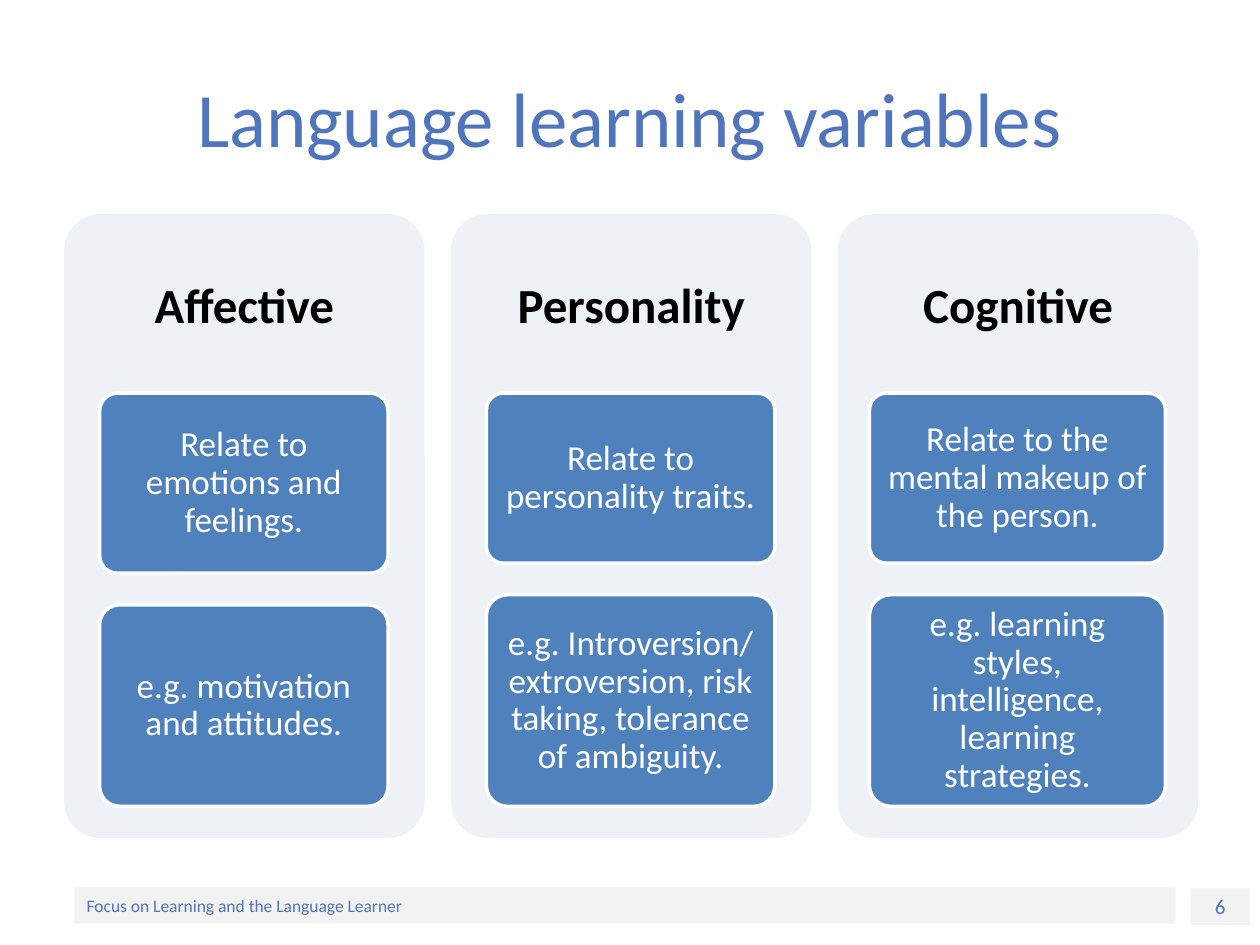
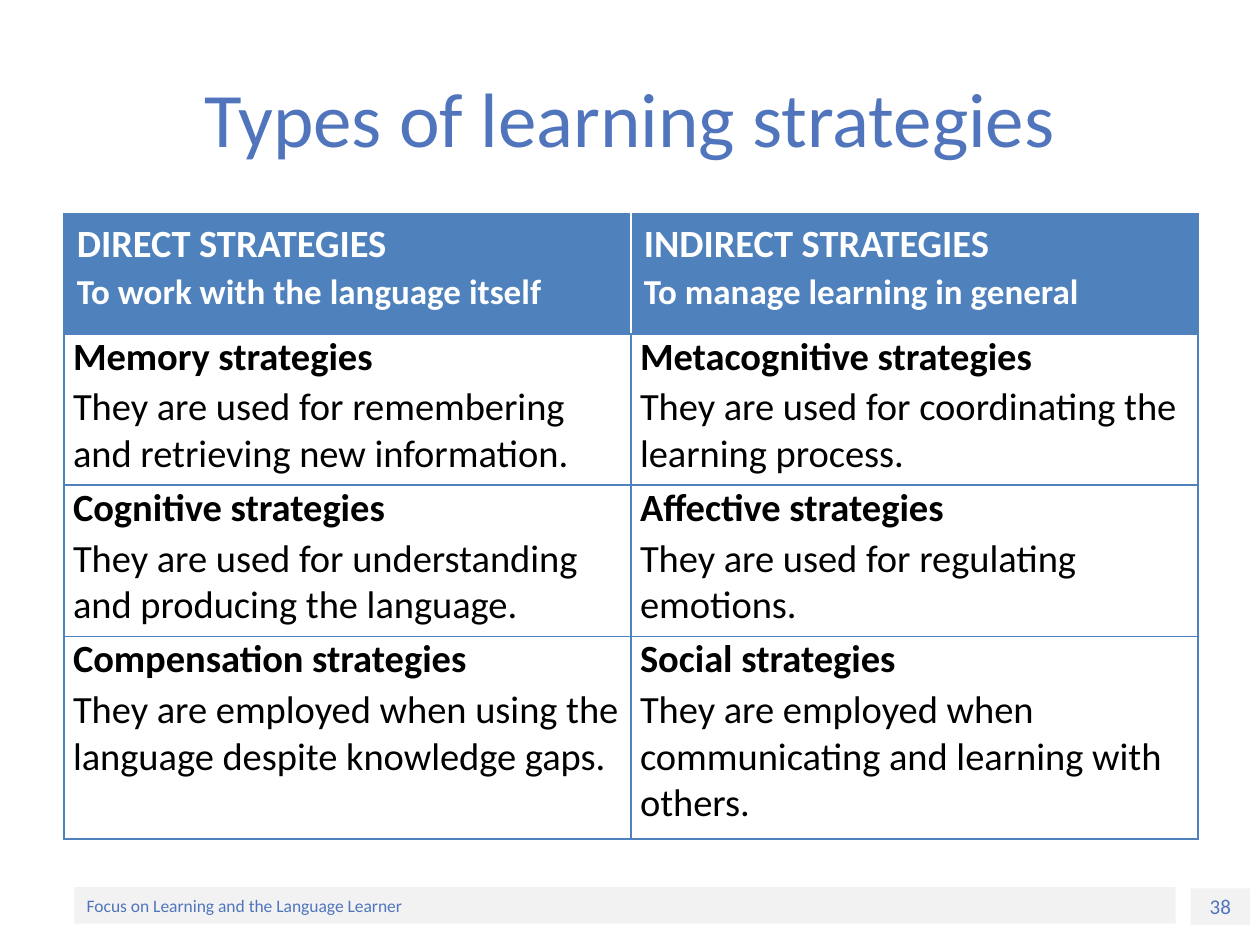
from lxml import etree
from pptx import Presentation, util as u
from pptx.dml.color import RGBColor
from pptx.enum import shapes, text
from pptx.oxml.ns import qn

PX = 9144  # one px is 1/100 inch
FONT = "Calibri"
C = {"title": "5075BC", "band": "F2F2F2", "panel": "EEF1F6",
     "box": "4F81BD", "white": "FFFFFF", "black": "000000"}
FOOTER = "Focus on Learning and the Language Learner"

# Column heading, box width, height of upper box, texts of both boxes
VARIABLES = [
    ("Affective", 229, 143, "Relate to emotions and feelings.",
     "e.g. motivation and attitudes."),
    ("Personality", 229, 135, "Relate to personality traits.",
     "e.g. Introversion/ extroversion, risk taking, tolerance of ambiguity."),
    ("Cognitive", 235, 135, "Relate to the mental makeup of the person.",
     "e.g. learning styles, intelligence, learning strategies."),
]

# Each cell holds a heading and a description
STRATEGIES = [
    [("DIRECT STRATEGIES", "To work with the language itself"),
     ("INDIRECT STRATEGIES", "To manage learning in general")],
    [("Memory strategies",
      "They are used for remembering and retrieving new information."),
     ("Metacognitive strategies",
      "They are used for coordinating the learning process.")],
    [("Cognitive strategies",
      "They are used for understanding and producing the language."),
     ("Affective strategies", "They are used for regulating emotions.")],
    [("Compensation strategies",
      "They are employed when using the language despite knowledge gaps."),
     ("Social strategies",
      "They are employed when communicating and learning with others.")],
]
ROW_HEIGHTS = [95, 120, 120, 161]


def px(*lengths):
    return [u.Emu(n * PX) for n in lengths]


def rgb(name):
    return RGBColor.from_string(C[name])


def write(p, words, size=20, color="black", bold=False,
          align=text.PP_ALIGN.LEFT, spacing=None, before=None):
    """Put formatted words into a paragraph."""
    p.alignment = align
    if spacing:
        p.line_spacing = spacing
    if before:
        p.space_before = u.Pt(before)
    r = p.add_run()
    r.text = words
    r.font.name, r.font.size, r.font.bold = FONT, u.Pt(size), bold
    r.font.color.rgb = rgb(color)


def fill_frame(sp, words, insets=(10, 5), **fmt):
    """Write one vertically centred paragraph into a shape."""
    tf = sp.text_frame
    tf.word_wrap = True
    tf.vertical_anchor = text.MSO_ANCHOR.MIDDLE
    tf.margin_left = tf.margin_right = px(insets[0])[0]
    tf.margin_top = tf.margin_bottom = px(insets[1])[0]
    write(tf.paragraphs[0], words, **fmt)


def add_label(s, at, words, **fmt):
    fill_frame(s.shapes.add_textbox(*px(*at)), words,
               align=text.PP_ALIGN.CENTER, **fmt)


def add_block(s, at, fill, rounded=False, line=None):
    kind = shapes.MSO_SHAPE.ROUNDED_RECTANGLE if rounded else shapes.MSO_SHAPE.RECTANGLE
    sp = s.shapes.add_shape(kind, *px(*at))
    sp.shadow.inherit = False
    sp.fill.solid()
    sp.fill.fore_color.rgb = rgb(fill)
    if rounded:
        sp.adjustments[0] = 0.1
    if line:
        sp.line.color.rgb = rgb(line)
        sp.line.width = u.Pt(2)
    else:
        sp.line.fill.background()
    return sp


def add_page(prs, title, number):
    """Add a slide with the shared footer bands and title."""
    s = prs.slides.add_slide(prs.slide_layouts[6])
    fill_frame(add_block(s, (945, 705, 47, 29), "band"), str(number),
               size=12, color="title", align=text.PP_ALIGN.CENTER)
    fill_frame(add_block(s, (59, 704, 874, 29), "band"), FOOTER,
               size=10, color="title")
    add_label(s, (50, 30, 900, 125), title, size=44, color="title")
    return s


def add_variable(s, left, heading, box_w, upper_h, relates, example):
    """Draw one panel with a heading and two stacked boxes."""
    panel_w, top, bottom, gap = 286, 312, 640, 25
    add_block(s, (left, 170, panel_w, 495), "panel", rounded=True)
    add_label(s, (left, 170, panel_w, 148), heading, insets=(12, 12),
              size=28, bold=True, spacing=0.9)
    x = left + (panel_w - box_w) // 2
    lower_top = top + upper_h + gap
    for y, h, words in ((top, upper_h, relates),
                        (lower_top, bottom - lower_top, example)):
        sp = add_block(s, (x, y, box_w, h), "box", rounded=True, line="white")
        fill_frame(sp, words, insets=(6, 4), color="white",
                   align=text.PP_ALIGN.CENTER, spacing=0.9)


def set_borders(cell, **sides):
    """Draw 1 pt cell borders; sides are named L, R, T and B in that order."""
    tc_pr = cell._tc.get_or_add_tcPr()
    for i, (side, color) in enumerate(sides.items()):
        ln = etree.Element(qn("a:ln" + side), w=str(u.Pt(1)))
        fill = etree.SubElement(ln, qn("a:solidFill"))
        etree.SubElement(fill, qn("a:srgbClr"), val=C[color])
        tc_pr.insert(i, ln)


def fill_cell(cell, heading, description, is_header, col):
    cell.fill.solid()
    cell.fill.fore_color.rgb = rgb("box" if is_header else "white")
    if not is_header:
        cell.margin_left = cell.margin_right = px(7)[0]
        cell.margin_top = cell.margin_bottom = 0
    color = "white" if is_header else "black"
    tf = cell.text_frame
    write(tf.paragraphs[0], heading, size=22, color=color, bold=True)
    write(tf.add_paragraph(), description, size=20 if is_header else 22,
          color=color, bold=is_header, before=2)
    inner = "white" if is_header else "box"
    set_borders(cell, L=inner if col else "box", R="box" if col else inner,
                T="box", B="box")


def add_strategy_table(s):
    frame = s.shapes.add_table(len(STRATEGIES), 2, *px(51, 170, 900, sum(ROW_HEIGHTS)))
    table = frame.table
    table.horz_banding = False
    for column in table.columns:
        column.width = px(450)[0]
    for i, (row, height) in enumerate(zip(STRATEGIES, ROW_HEIGHTS)):
        table.rows[i].height = px(height)[0]
        for j, (heading, description) in enumerate(row):
            fill_cell(table.cell(i, j), heading, description, i == 0, j)


def main():
    prs = Presentation()
    prs.slide_width, prs.slide_height = px(1000, 750)

    # Variables in three panels
    s = add_page(prs, "Language learning variables", 6)
    for i, variable in enumerate(VARIABLES):
        add_variable(s, 51 + 307 * i, *variable)

    # Strategies table
    s = add_page(prs, "Types of learning strategies", 38)
    add_strategy_table(s)

    prs.save("out.pptx")


if __name__ == "__main__":
    main()
